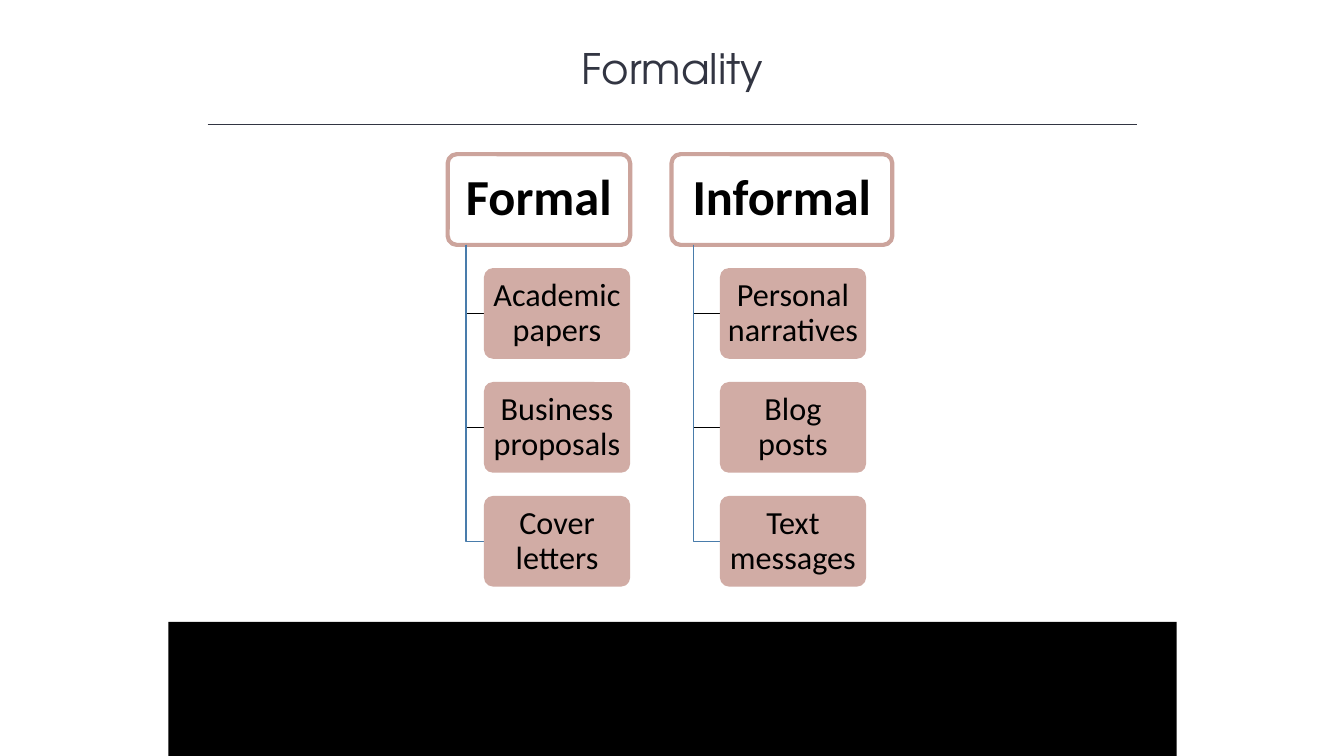
from pptx import Presentation
from pptx.dml.color import RGBColor
from pptx.enum.shapes import MSO_CONNECTOR, MSO_SHAPE
from pptx.enum.text import MSO_ANCHOR, PP_ALIGN
from pptx.oxml.ns import qn
from pptx.util import Inches, Pt
from lxml.etree import SubElement

TITLE = "Formality"
COLUMNS = [
    {"head": "Formal", "left": 4.44, "width": 1.81, "item_left": 4.8,
     "items": ["Academic papers", "Business proposals", "Cover letters"]},
    {"head": "Informal", "left": 6.66, "width": 2.19, "item_left": 7.14,
     "items": ["Personal narratives", "Blog posts", "Text messages"]},
]

INK = RGBColor(0x32, 0x35, 0x42)
BLACK = RGBColor(0, 0, 0)
WHITE = RGBColor(0xFF, 0xFF, 0xFF)
ROSE = RGBColor(0xCC, 0xA4, 0x9C)
BLUE = RGBColor(0x49, 0x7C, 0xAB)

HEAD_TOP = 1.53
BOX_HEIGHT = 0.9
ITEM_WIDTH = 1.45
ITEM_STEP = 1.13
FIRST_ITEM_TOP = 2.66


def set_text(sp, text, font, size, color, bold=False):
    tf = sp.text_frame
    tf.word_wrap = True
    p = tf.paragraphs[0]
    p.text = text
    p.alignment = PP_ALIGN.CENTER
    p.font.name = font
    p.font.size = Pt(size)
    p.font.bold = bold
    p.font.color.rgb = color
    return tf


def add_box(slide, left, top, width, text, size, inset, fill, bold=False):
    sp = slide.shapes.add_shape(MSO_SHAPE.ROUNDED_RECTANGLE, Inches(left), Inches(top),
                                Inches(width), Inches(BOX_HEIGHT))
    sp.adjustments[0] = 0.1
    sp.shadow.inherit = False
    sp.fill.solid()
    sp.fill.fore_color.rgb = fill
    sp.line.fill.background()
    tf = set_text(sp, text, "Calibri", size, BLACK, bold)
    tf.paragraphs[0].line_spacing = 0.9
    tf.vertical_anchor = MSO_ANCHOR.MIDDLE
    tf.margin_left = tf.margin_right = Inches(inset)
    tf.margin_top = tf.margin_bottom = Inches(0.03)
    return sp


def add_branch(slide, x, top, item_left, item_middle, color):
    builder = slide.shapes.build_freeform(Inches(x), Inches(top))
    builder.add_line_segments([(Inches(x), Inches(item_middle)),
                               (Inches(item_left), Inches(item_middle))], close=False)
    sp = builder.convert_to_shape()
    sp.shadow.inherit = False
    sp.fill.background()
    sp.line.color.rgb = color
    sp.line.width = Pt(1)


def add_column(slide, column):
    head = add_box(slide, column["left"], HEAD_TOP, column["width"], column["head"],
                   36, 0.07, WHITE, bold=True)
    head.line.color.rgb = ROSE
    head.line.width = Pt(3)
    stem = column["left"] + column["width"] / 10
    for i, item in enumerate(column["items"]):
        top = FIRST_ITEM_TOP + i * ITEM_STEP
        color = BLUE if i == len(column["items"]) - 1 else BLACK
        add_branch(slide, stem, HEAD_TOP + BOX_HEIGHT, column["item_left"],
                   top + BOX_HEIGHT / 2, color)
        sp = add_box(slide, column["item_left"], top, ITEM_WIDTH, item, 23, 0.05, ROSE)
        rgb = sp.fill._xPr.find(qn("a:solidFill")).find(qn("a:srgbClr"))
        SubElement(rgb, qn("a:alpha")).set("val", "90000")


def main():
    prs = Presentation()
    prs.slide_width, prs.slide_height = Inches(13.33), Inches(7.5)
    slide = prs.slides.add_slide(prs.slide_layouts[6])

    title = slide.shapes.add_textbox(Inches(1.67), Inches(0.37), Inches(10), Inches(0.61))
    set_text(title, TITLE, "TeX Gyre Adventor", 30, INK)

    footer = slide.shapes.add_shape(MSO_SHAPE.RECTANGLE, Inches(1.67), Inches(6.17),
                                    Inches(10), Inches(1.33))
    footer.shadow.inherit = False
    footer.fill.solid()
    footer.fill.fore_color.rgb = BLACK
    footer.line.fill.background()

    rule = slide.shapes.add_connector(MSO_CONNECTOR.STRAIGHT, Inches(2.06), Inches(1.24),
                                      Inches(11.28), Inches(1.24))
    rule.line.color.rgb = INK
    rule.line.width = Pt(0.75)
    SubElement(rule._element.spPr, qn("a:effectLst"))

    for column in COLUMNS:
        add_column(slide, column)
    prs.save("out.pptx")


if __name__ == "__main__":
    main()
